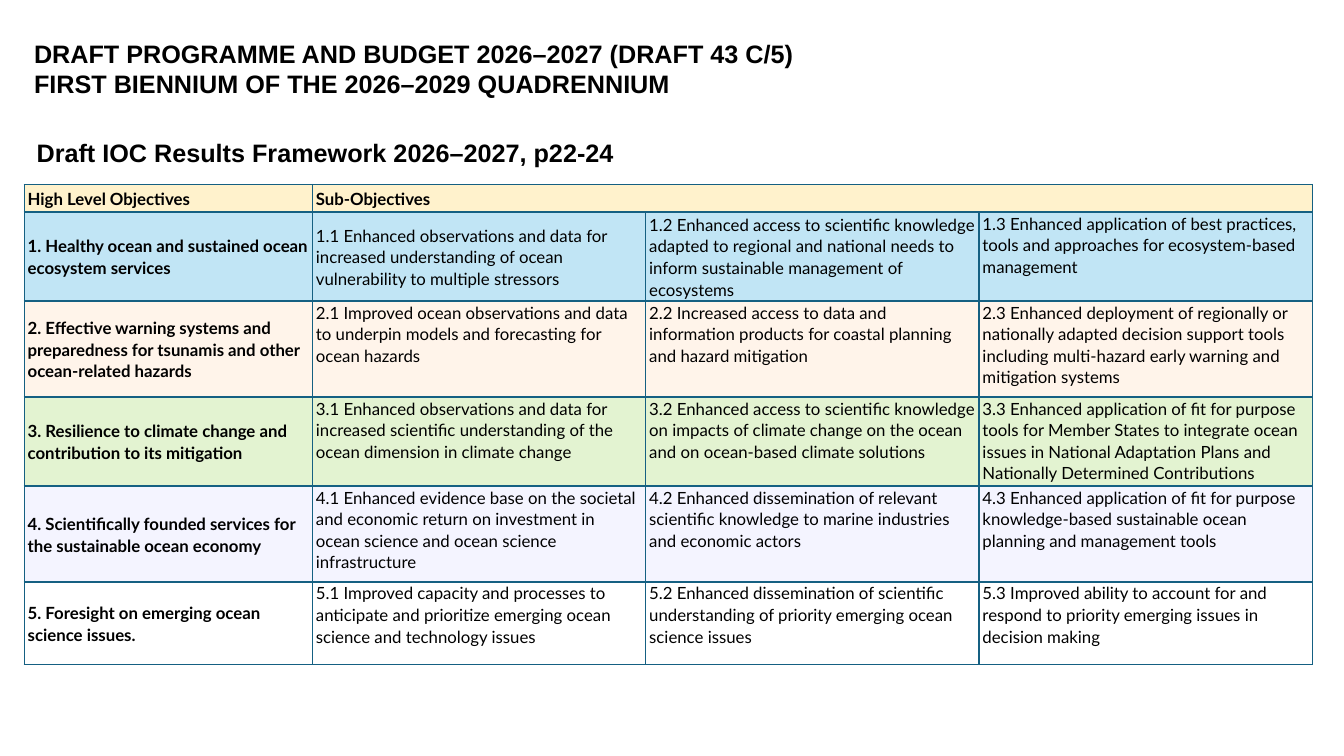
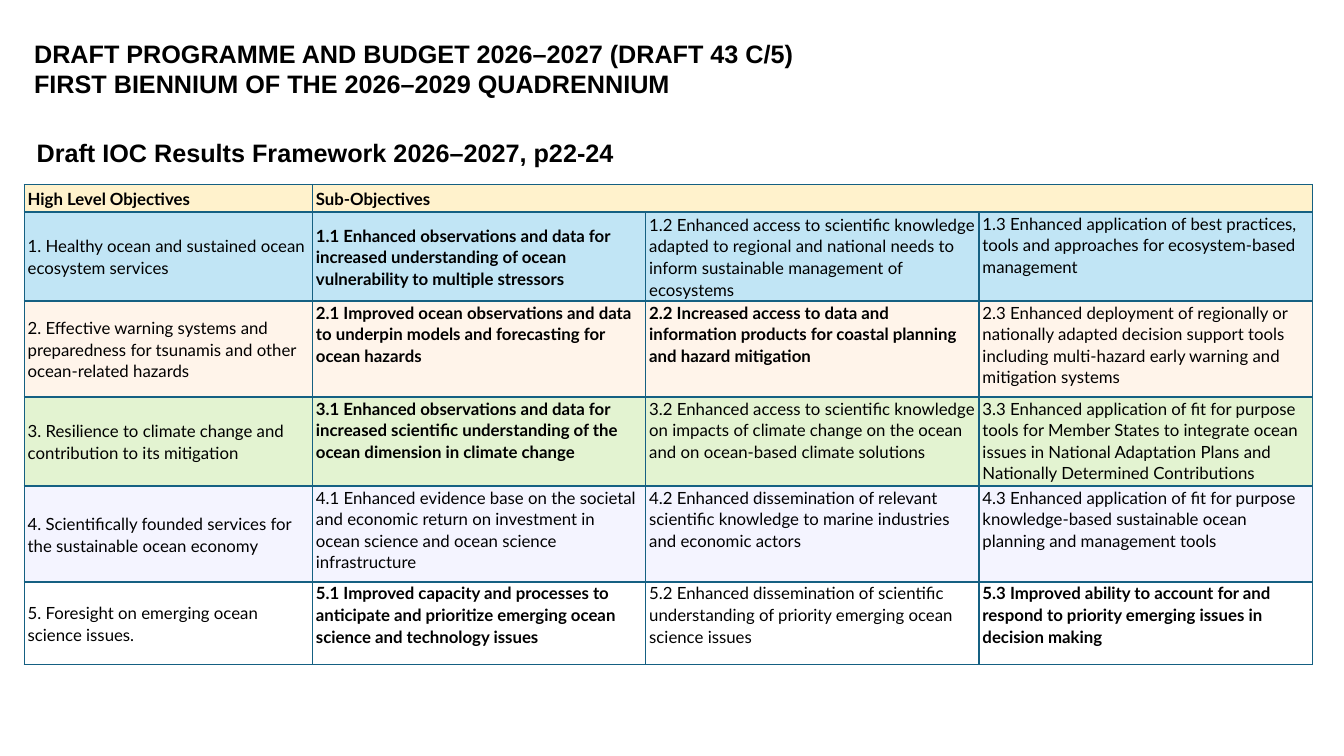
from lxml import etree
from pptx import Presentation
from pptx import util as u
from pptx.dml.color import RGBColor
from pptx.enum import text as t
from pptx.oxml import ns

BLACK = RGBColor(0x00, 0x00, 0x00)
TEAL = RGBColor(0x15, 0x60, 0x82)
GOLD = RGBColor(0xFF, 0xC0, 0x00)
BLUE = RGBColor(0xC1, 0xE5, 0xF5)
PEACH = RGBColor(0xFF, 0xCC, 0x99)
GREEN = RGBColor(0xE3, 0xF3, 0xD1)
LILAC = RGBColor(0xCC, 0xCC, 0xFF)
PALE = 20

TITLE = (
    "DRAFT PROGRAMME AND BUDGET 2026–2027 (DRAFT 43 C/5)\n"
    "FIRST BIENNIUM OF THE 2026–2029 QUADRENNIUM"
)
TOPIC = "Draft IOC Results Framework 2026–2027, p22-24"
HEAD = ("High Level Objectives", "Sub-Objectives")
GOALS = [
    ("1. Healthy ocean and sustained ocean ecosystem services",
     "1.1 Enhanced observations and data for increased understanding of ocean vulnerability to multiple stressors",
     "1.2 Enhanced access to scientific knowledge adapted to regional and national needs to inform sustainable management of ecosystems",
     "1.3 Enhanced application of best practices, tools and approaches for ecosystem-based management"),
    ("2. Effective warning systems and preparedness for tsunamis and other ocean-related hazards",
     "2.1 Improved ocean observations and data to underpin models and forecasting for ocean hazards",
     "2.2 Increased access to data and information products for coastal planning and hazard mitigation",
     "2.3 Enhanced deployment of regionally or nationally adapted decision support tools including multi-hazard early warning and mitigation systems"),
    ("3. Resilience to climate change and contribution to its mitigation",
     "3.1 Enhanced observations and data for increased scientific understanding of the ocean dimension in climate change",
     "3.2 Enhanced access to scientific knowledge on impacts of climate change on the ocean and on ocean-based climate solutions",
     "3.3 Enhanced application of fit for purpose tools for Member States to integrate ocean issues in National Adaptation Plans and Nationally Determined Contributions"),
    ("4. Scientifically founded services for the sustainable ocean economy",
     "4.1 Enhanced evidence base on the societal and economic return on investment in ocean science and ocean science infrastructure",
     "4.2 Enhanced dissemination of relevant scientific knowledge to marine industries and economic actors",
     "4.3 Enhanced application of fit for purpose knowledge-based sustainable ocean planning and management tools"),
    ("5. Foresight on emerging ocean science issues.",
     "5.1 Improved capacity and processes to anticipate and prioritize emerging ocean science and technology issues",
     "5.2 Enhanced dissemination of scientific understanding of priority emerging ocean science issues",
     "5.3 Improved ability to account for and respond to priority emerging issues in decision making"),
]
FILLS = [(GOLD, PALE), (BLUE, 100), (PEACH, PALE), (GREEN, 100), (LILAC, PALE), (None, 100)]
COLS = [21.45, 24.8, 24.8, 24.8]
ROWS = [3.65, 11.77, 12.7, 11.77, 12.7, 10.93]
LEFT = 1.8

DECKS = [
    (93.85, {"1.", "2.", "3.", "4.", "5."}),
    (72.7, {"1.1", "2.1", "2.2", "3.1", "5.1", "5.3"}),
]


def write(frame, words, face="Lato", size=12, bold=False, align=None, lead=None):
    para = frame.paragraphs[0]
    para.text = words
    para.alignment = align
    para.line_spacing = lead
    for run in para.runs:
        run.font.name = face
        run.font.size = u.Pt(size)
        run.font.bold = bold
        run.font.color.rgb = BLACK


class Deck:
    def __init__(self):
        self.show = Presentation()
        self.show.slide_width = u.Inches(13.33)
        self.show.slide_height = u.Inches(7.5)
        self.slide = None

    def wide(self, share):
        return round(self.show.slide_width * share / 100)

    def high(self, share):
        return round(self.show.slide_height * share / 100)

    def page(self):
        self.slide = self.show.slides.add_slide(self.show.slide_layouts[6])

    def label(self, words, top, width, height, align=None):
        box = self.slide.shapes.add_textbox(
            self.wide(LEFT), self.high(top), self.wide(width), self.high(height))
        box.text_frame.word_wrap = True
        box.text_frame.auto_size = t.MSO_AUTO_SIZE.SHAPE_TO_FIT_TEXT
        write(box.text_frame, words, face="Arial", size=18, bold=True, align=align)

    def edge(self, cell):
        props = cell._tc.get_or_add_tcPr()
        for side in ("lnL", "lnR", "lnT", "lnB"):
            line = etree.SubElement(props, ns.qn("a:" + side), w=str(u.Pt(1)))
            fill = etree.SubElement(line, ns.qn("a:solidFill"))
            etree.SubElement(fill, ns.qn("a:srgbClr"), val=str(TEAL))

    def paint(self, cell, tint, share):
        if tint is None:
            cell.fill.background()
            return
        cell.fill.solid()
        cell.fill.fore_color.rgb = tint
        if share < 100:
            color = cell._tc.tcPr.find(ns.qn("a:solidFill"))[0]
            etree.SubElement(color, ns.qn("a:alpha"), val=str(share * 1000))

    def cell(self, cell, words, tint, share, bold, mid):
        cell.margin_left = cell.margin_right = u.Pt(2.5)
        cell.margin_top = cell.margin_bottom = 0
        cell.vertical_anchor = t.MSO_ANCHOR.MIDDLE if mid else t.MSO_ANCHOR.TOP
        self.edge(cell)
        self.paint(cell, tint, share)
        if words:
            write(cell.text_frame, words, bold=bold, lead=1.07)

    def table(self, top, strong):
        frame = self.slide.shapes.add_table(
            len(ROWS), len(COLS), self.wide(LEFT), self.high(top),
            self.wide(sum(COLS)), self.high(sum(ROWS)))
        grid = frame.table
        grid.first_row = grid.horz_banding = False
        for col, share in zip(grid.columns, COLS):
            col.width = self.wide(share)
        for row, share in zip(grid.rows, ROWS):
            row.height = self.high(share)
        grid.cell(0, 1).merge(grid.cell(0, 3))
        lines = [HEAD + ("", "")] + GOALS
        for i, (line, (tint, share)) in enumerate(zip(lines, FILLS)):
            for j, words in enumerate(line):
                bold = i == 0 or words.split()[0] in strong
                mid = i == 0 or j == 0 or (i == 1 and j < 3)
                self.cell(grid.cell(i, j), words, tint, share, bold, mid)


def main():
    deck = Deck()
    for width, strong in DECKS:
        deck.page()
        deck.label(TITLE, 4.4, width, 9.47)
        deck.label(TOPIC, 17.47, 44.8, 5.33, align=t.PP_ALIGN.CENTER)
        deck.table(24.4, strong)
    deck.show.save("out.pptx")


if __name__ == "__main__":
    main()
